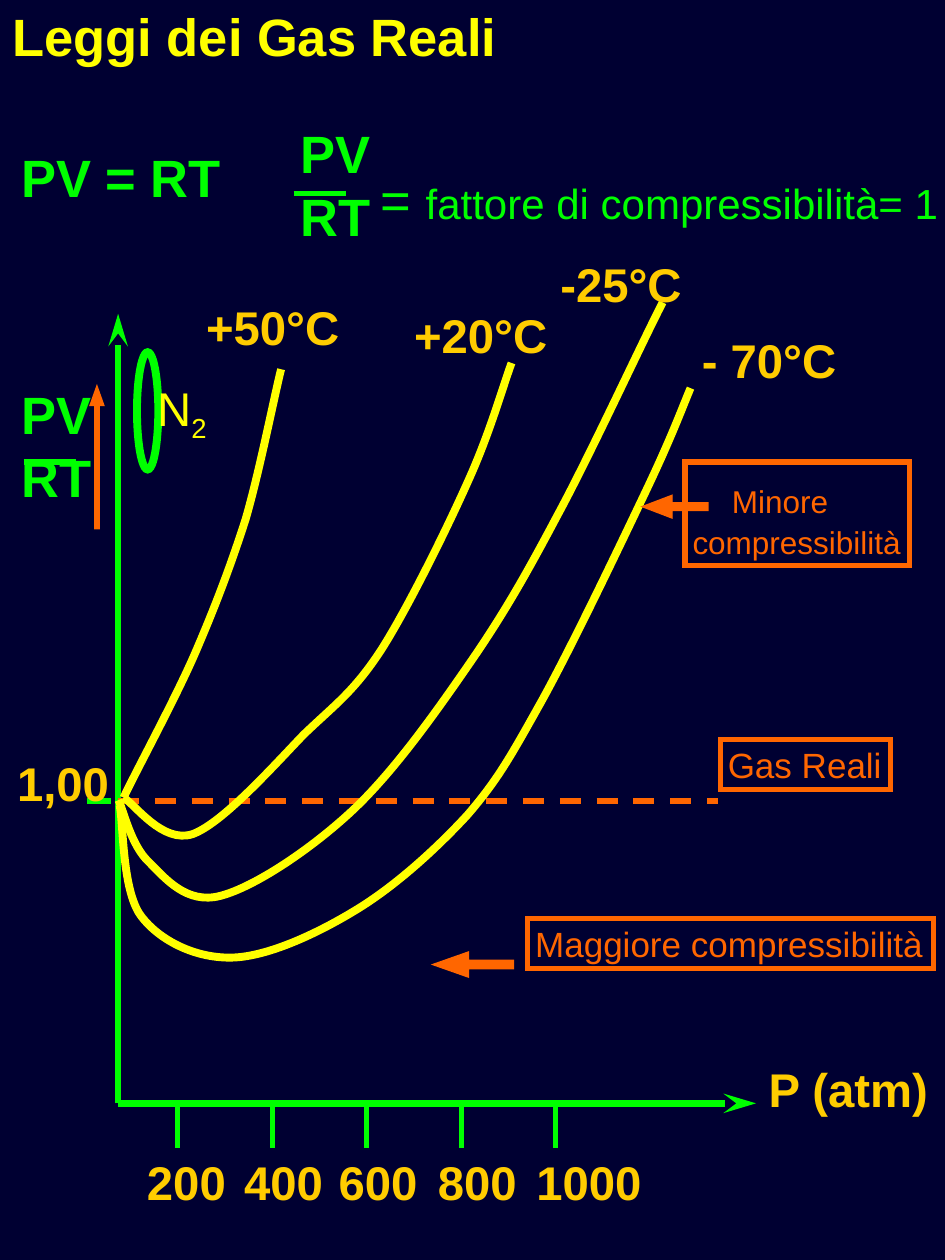
from pptx import Presentation
from pptx.dml.color import RGBColor as RGB
from pptx.enum.dml import MSO_LINE as Dash
from pptx.enum.shapes import MSO_CONNECTOR as Conn, MSO_SHAPE as Form
from pptx.enum.text import MSO_ANCHOR as Anchor, MSO_AUTO_SIZE as Fit, PP_ALIGN as Align
from pptx.oxml.ns import qn
from pptx.util import Pt
from lxml.etree import SubElement as Sub

GREEN, YELLOW, GOLD, ORANGE = "00FF00", "FFFF00", "FFCC00", "FF6600"

# Each curve: a start point, then cubic steps of two handles and an end
CURVES = [
    [(70.6, 455.8), (77, 442.1), (100.1, 399.6), (111.6, 373),
     (123.1, 346.3), (131.8, 323.3), (140.4, 296.6),
     (148.3, 269.3), (156.2, 229), (160.6, 211)],
    [(70.6, 455.8), (77, 459.4), (92.9, 482.4), (110.2, 476.6),
     (127.4, 470.2), (156.2, 437.8), (173.5, 419.8),
     (191.5, 402.5), (202.3, 395.3), (218.2, 370.8),
     (233.3, 347), (255.6, 301.7), (267.8, 274.3),
     (280.1, 247), (287.3, 221), (292.3, 207.4)],
    [(67.7, 457.2), (70.6, 463), (74.9, 483.1), (85, 492.5),
     (94.3, 501.8), (106.6, 517), (126, 511.9),
     (145.4, 506.9), (177.8, 485.3), (201.6, 463),
     (224.6, 441.4), (247.7, 409), (267.1, 380.9),
     (286.6, 352.8), (299.5, 330.5), (318.2, 295.2),
     (337, 260.6), (365.8, 198), (378.7, 172.8)],
    [(68.4, 460.1), (70.6, 470.9), (69.8, 509), (80.6, 523.4),
     (91.4, 537.8), (112.3, 547.9), (133.2, 547.2),
     (153.4, 546.5), (181.4, 533.5), (203.8, 519.8),
     (226.1, 506.2), (249.1, 485.3), (267.1, 465.8),
     (284.4, 445.7), (291.6, 432.7), (308.9, 401.8),
     (326.2, 370.8), (355, 310.3), (369.4, 280.1),
     (383.8, 249.8), (389.5, 234), (394.6, 221.8)],
]


def tint(code):
    return RGB.from_string(code)


def pen(line, color, width):
    line.color.rgb = tint(color)
    line.width = Pt(width)


def add_run(para, text, size, color, bold=False):
    run = para.add_run()
    run.text = text
    font = run.font
    font.name, font.size, font.bold = "Arial", Pt(size), bold
    font.color.rgb = tint(color)
    return run


def set_frame(shape, wrap=False, anchor=Anchor.TOP):
    frame = shape.text_frame
    frame.word_wrap, frame.auto_size = wrap, Fit.SHAPE_TO_FIT_TEXT
    frame.vertical_anchor = anchor
    frame.margin_left = frame.margin_right = Pt(4.3)
    frame.margin_top = frame.margin_bottom = Pt(2.16)
    frame.paragraphs[0].alignment = Align.LEFT
    return frame


def add_text(slide, box, text, size, color, bold=True):
    shape = slide.shapes.add_textbox(*map(Pt, box))
    para = set_frame(shape).paragraphs[0]
    add_run(para, text, size, color, bold)
    return para


def add_line(slide, x1, y1, x2, y2, color, width=3, head=False):
    line = slide.shapes.add_connector(Conn.STRAIGHT, Pt(x1), Pt(y1), Pt(x2), Pt(y2))
    pen(line.line, color, width)
    props = line._element.spPr
    if head:
        Sub(props.find(qn("a:ln")), qn("a:tailEnd"), type="stealth", w="med", len="lg")
    Sub(props, qn("a:effectLst"))
    return line


def add_form(slide, form, box, color, width, fill=False):
    shape = slide.shapes.add_shape(form, *map(Pt, box))
    shape.shadow.inherit = False
    pen(shape.line, color, width)
    # Sharp corners
    Sub(shape._element.spPr.find(qn("a:ln")), qn("a:miter"), lim="800000")
    if fill:
        shape.fill.solid()
        shape.fill.fore_color.rgb = tint(color)
    else:
        shape.fill.background()
    return shape


def add_label(slide, box, text, size, wrap=False):
    shape = add_form(slide, Form.RECTANGLE, box, ORANGE, 3)
    frame = set_frame(shape, wrap, Anchor.MIDDLE)
    add_run(frame.paragraphs[0], text, size, ORANGE)
    return frame


def add_arrow(slide, box, length, turn=0):
    shape = add_form(slide, Form.LEFT_ARROW, box, ORANGE, 0.75, True)
    shape.adjustments[0], shape.adjustments[1] = 0.33, length
    shape.rotation = turn


def add_ratio(slide, left, top, bar, level):
    para = add_text(slide, (left, top, 50.4, 77), "PV", 30, GREEN)
    low = para._parent.add_paragraph()
    low.alignment = Align.LEFT
    add_run(low, "RT", 30, GREEN, True)
    add_line(slide, bar, level, bar + 30, level, GREEN)


def add_curve(slide, points):
    dots = [(Pt(x), Pt(y)) for x, y in points]
    build = slide.shapes.build_freeform(*dots[0])
    build.add_line_segments(dots[1:], close=False)
    curve = build.convert_to_shape()
    # Turn each three straight steps into one cubic step
    steps = list(curve._element.iter(qn("a:lnTo")))
    for k in range(0, len(steps), 3):
        cubic = Sub(steps[k].getparent(), qn("a:cubicBezTo"))
        for step in steps[k:k + 3]:
            cubic.append(step[0])
            step.getparent().remove(step)
    curve.shadow.inherit = False
    curve.fill.background()
    pen(curve.line, YELLOW, 4.5)


def add_title(slide):
    title = slide.shapes.title
    title.left, title.top, title.width, title.height = map(Pt, (2.9, 0, 288, 41))
    add_run(set_frame(title).paragraphs[0], "Leggi dei Gas Reali", 30, YELLOW, True)


def add_laws(slide):
    add_text(slide, (7.9, 80.6, 123.8, 41), "PV = RT", 30, GREEN)
    add_ratio(slide, 167.5, 67, 167.8, 110.6)
    para = add_text(slide, (213.1, 93.3, 337, 41), "= ", 30, GREEN, False)
    add_run(para, "fattore di compressibilità= 1", 24, GREEN)


def add_axes(slide):
    add_line(slide, 67.5, 630.5, 67.5, 179.3, GREEN, 3.75, True)
    add_line(slide, 67.5, 630.5, 432, 630.5, GREEN, 3.75, True)
    unit = add_line(slide, 67.5, 457.7, 410.4, 457.7, ORANGE)
    unit.line.dash_style = Dash.DASH
    add_line(slide, 63.4, 457.7, 49.7, 457.7, GREEN)
    add_text(slide, (5.5, 428.8, 64, 36.7), "1,00", 27, GOLD)
    add_text(slide, (434.9, 603.8, 102, 36.7), "P (atm)", 27, GOLD)
    # Pressure ticks at equal steps
    for k, left in enumerate((79.7, 135.2, 189.2, 246, 302.2)):
        x = 101.6 + 54 * k
        add_line(slide, x, 632.2, x, 655.9, GREEN)
        text = str(200 * (k + 1))
        add_text(slide, (left, 656.6, 12 + 15.5 * len(text), 36.7), text, 27, GOLD)


def add_notes(slide):
    add_label(slide, (411.6, 422.4, 97.4, 28.8), "Gas Reali", 20)
    add_label(slide, (301.5, 524.9, 232, 28.8), "Maggiore compressibilità", 20)
    add_arrow(slide, (247.3, 544, 46.1, 14.4), 1.42)
    frame = add_label(slide, (391.4, 264, 128.2, 59), "Minore", 18, True)
    first = frame.paragraphs[0]
    first.line_spacing = Pt(31)
    first._p.get_or_add_pPr().set("marL", str(Pt(22.5)))
    last = frame.add_paragraph()
    last.alignment = Align.LEFT
    last.space_before = Pt(1.8)
    add_run(last, "compressibilità", 18, ORANGE)
    add_arrow(slide, (367, 283, 37.6, 13), 1.31)


def main():
    deck = Presentation()
    deck.slide_width, deck.slide_height = Pt(540), Pt(720)
    slide = deck.slides.add_slide(deck.slide_layouts[5])
    slide.background.fill.solid()
    slide.background.fill.fore_color.rgb = tint("000032")
    add_title(slide)
    add_laws(slide)
    add_axes(slide)
    # Isotherms and their temperatures
    for points in CURVES:
        add_curve(slide, points)
    for text, left, top in (("+50°C", 113.5, 168), ("+20°C", 232.3, 172.8),
                            ("-25°C", 315.9, 143.6), ("- 70°C", 396.7, 187.2)):
        add_text(slide, (left, top, 87, 36.7), text, 27, GOLD)
    # Gas sign
    add_form(slide, Form.OVAL, (78.3, 201.3, 12.2, 67), GREEN, 4.5)
    para = add_text(slide, (85.5, 214.8, 40, 52.6), "N", 27, YELLOW, False)
    sub = add_run(para, "2", 27, YELLOW)
    sub._r.get_or_add_rPr().set("baseline", "-25000")
    # Name of the upright axis
    add_ratio(slide, 7.9, 216, 13.7, 264)
    add_arrow(slide, (14.6, 257.3, 81.6, 8), 1.41, 90)
    add_notes(slide)
    deck.save("out.pptx")


if __name__ == "__main__":
    main()
